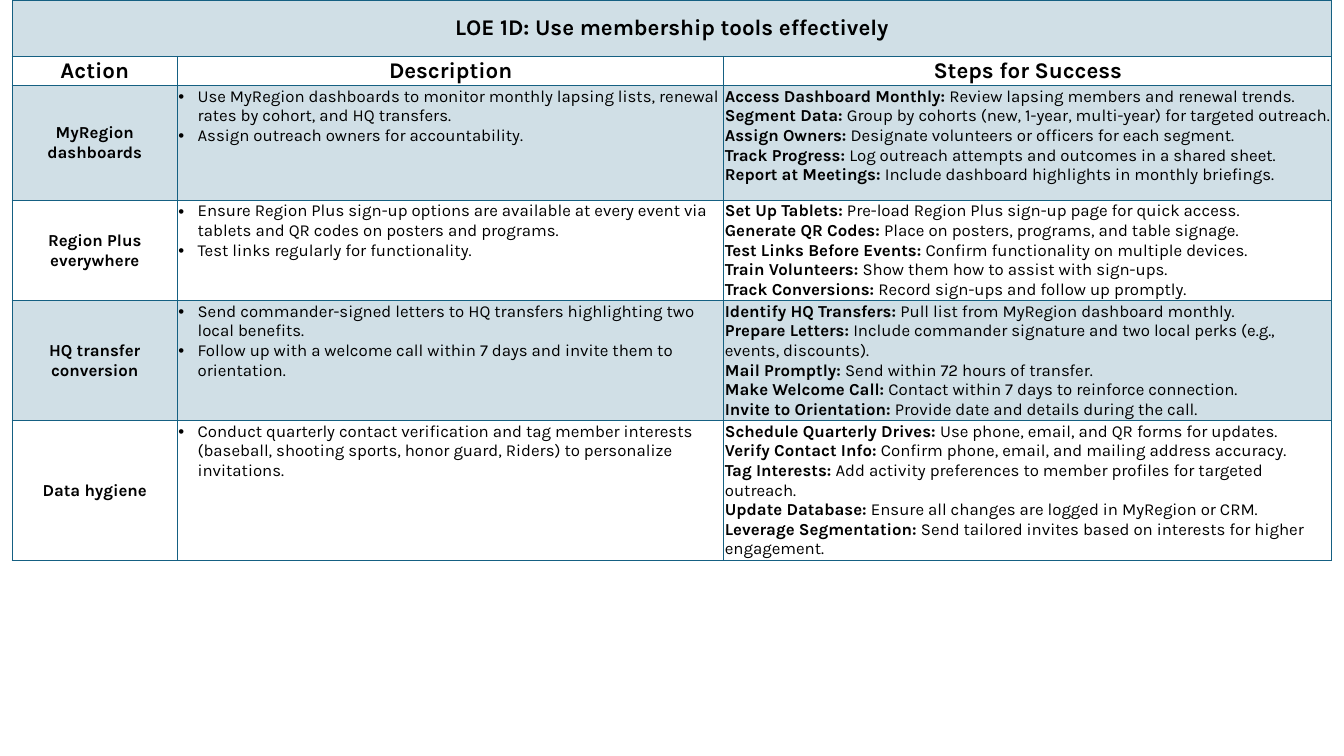
from pptx import Presentation
from pptx.dml.color import RGBColor
from pptx.enum.text import MSO_ANCHOR, PP_ALIGN
from pptx.oxml.ns import qn
from pptx.util import Inches, Pt
from lxml.etree import SubElement

BLUE = RGBColor(0x15, 0x60, 0x82)
BLACK = RGBColor(0, 0, 0)
FONT = "Karla"
HEADING_SIZE = 16
BODY_SIZE = 12
TINT_ALPHA = "20000"
COLUMN_WIDTHS = [1.64, 5.42, 6.03]
ROW_HEIGHTS = [0.56, 0.29, 1.14, 0.95, 0.95, 1.14]

TITLE = "LOE 1D: Use membership tools effectively"
HEADINGS = ["Action", "Description", "Steps for Success"]
ACTIONS = [
    ("MyRegion dashboards",
     ["Use MyRegion dashboards to monitor monthly lapsing lists, renewal rates by cohort, and HQ transfers.",
      "Assign outreach owners for accountability."],
     [("Access Dashboard Monthly:", "Review lapsing members and renewal trends."),
      ("Segment Data:", "Group by cohorts (new, 1-year, multi-year) for targeted outreach."),
      ("Assign Owners:", "Designate volunteers or officers for each segment."),
      ("Track Progress:", "Log outreach attempts and outcomes in a shared sheet."),
      ("Report at Meetings:", "Include dashboard highlights in monthly briefings.")]),
    ("Region Plus everywhere",
     ["Ensure Region Plus sign-up options are available at every event via tablets and QR codes "
      "on posters and programs.",
      "Test links regularly for functionality."],
     [("Set Up Tablets:", "Pre-load Region Plus sign-up page for quick access."),
      ("Generate QR Codes:", "Place on posters, programs, and table signage."),
      ("Test Links Before Events:", "Confirm functionality on multiple devices."),
      ("Train Volunteers:", "Show them how to assist with sign-ups."),
      ("Track Conversions:", "Record sign-ups and follow up promptly.")]),
    ("HQ transfer conversion",
     ["Send commander-signed letters to HQ transfers highlighting two local benefits.",
      "Follow up with a welcome call within 7 days and invite them to orientation."],
     [("Identify HQ Transfers:", "Pull list from MyRegion dashboard monthly."),
      ("Prepare Letters:", "Include commander signature and two local perks (e.g., events, discounts)."),
      ("Mail Promptly:", "Send within 72 hours of transfer."),
      ("Make Welcome Call:", "Contact within 7 days to reinforce connection."),
      ("Invite to Orientation:", "Provide date and details during the call.")]),
    ("Data hygiene",
     ["Conduct quarterly contact verification and tag member interests (baseball, shooting sports, "
      "honor guard, Riders) to personalize invitations."],
     [("Schedule Quarterly Drives:", "Use phone, email, and QR forms for updates."),
      ("Verify Contact Info:", "Confirm phone, email, and mailing address accuracy."),
      ("Tag Interests:", "Add activity preferences to member profiles for targeted outreach."),
      ("Update Database:", "Ensure all changes are logged in MyRegion or CRM."),
      ("Leverage Segmentation:", "Send tailored invites based on interests for higher engagement.")]),
]


def add_run(paragraph, text, size=BODY_SIZE, bold=False):
    """Add one run of black text."""
    run = paragraph.add_run()
    run.text = text
    run.font.name = FONT
    run.font.size = Pt(size)
    run.font.bold = bold
    run.font.color.rgb = BLACK


def cell_paragraphs(cell, items):
    """Pair each item with its own paragraph in the cell."""
    frame = cell.text_frame
    for index, item in enumerate(items):
        yield (frame.add_paragraph() if index else frame.paragraphs[0]), item


def style_cell(cell, tinted):
    """Set the margins, borders and fill of a cell."""
    cell.margin_left = cell.margin_right = Inches(0.01)
    cell.margin_top = cell.margin_bottom = Inches(0.01)
    properties = cell._tc.get_or_add_tcPr()
    for side in ("lnL", "lnR", "lnT", "lnB"):
        line = SubElement(properties, qn(f"a:{side}"), w=str(Pt(1)))
        line_fill = SubElement(line, qn("a:solidFill"))
        SubElement(line_fill, qn("a:srgbClr"), val=str(BLUE))
    if tinted:
        cell.fill.solid()
        cell.fill.fore_color.rgb = BLUE
        color = properties.find(qn("a:solidFill")).find(qn("a:srgbClr"))
        SubElement(color, qn("a:alpha"), val=TINT_ALPHA)
    else:
        cell.fill.background()


def fill_label(cell, text, size):
    """Write a bold label centred in the cell."""
    cell.vertical_anchor = MSO_ANCHOR.MIDDLE
    paragraph = cell.text_frame.paragraphs[0]
    paragraph.alignment = PP_ALIGN.CENTER
    add_run(paragraph, text, size, True)


def fill_description(cell, sentences):
    """Write the description as a bulleted list."""
    for paragraph, sentence in cell_paragraphs(cell, sentences):
        properties = paragraph._p.get_or_add_pPr()
        properties.set("marL", str(Inches(0.19)))
        properties.set("indent", str(Inches(-0.19)))
        SubElement(properties, qn("a:buFont"), typeface="Arial")
        SubElement(properties, qn("a:buChar"), char="•")
        add_run(paragraph, sentence)


def fill_steps(cell, steps):
    """Write the steps, each led by its name in bold."""
    for paragraph, (name, detail) in cell_paragraphs(cell, steps):
        add_run(paragraph, name, bold=True)
        add_run(paragraph, f" {detail}")


def add_action_table(slide, left, top, width, height):
    """Build the table of actions in the given box."""
    table = slide.shapes.add_table(len(ROW_HEIGHTS), len(COLUMN_WIDTHS), Inches(left), Inches(top),
                                   Inches(width), Inches(height)).table
    table.first_row = table.horz_banding = False
    for column, column_width in zip(table.columns, COLUMN_WIDTHS):
        column.width = Inches(column_width)
    for index, (row, row_height) in enumerate(zip(table.rows, ROW_HEIGHTS)):
        row.height = Inches(row_height)
        for cell in row.cells:
            style_cell(cell, tinted=index % 2 == 0)
    table.cell(0, 0).merge(table.cell(0, len(COLUMN_WIDTHS) - 1))
    fill_label(table.cell(0, 0), TITLE, HEADING_SIZE)
    for column, heading in enumerate(HEADINGS):
        fill_label(table.cell(1, column), heading, HEADING_SIZE)
    for row, (action, sentences, steps) in enumerate(ACTIONS, start=2):
        fill_label(table.cell(row, 0), action, BODY_SIZE)
        fill_description(table.cell(row, 1), sentences)
        fill_steps(table.cell(row, 2), steps)


def main():
    """Build and save the presentation."""
    presentation = Presentation()
    presentation.slide_width = Inches(13.33)
    presentation.slide_height = Inches(7.5)
    slide = presentation.slides.add_slide(presentation.slide_layouts[6])
    add_action_table(slide, 0.12, 0, sum(COLUMN_WIDTHS), sum(ROW_HEIGHTS))
    presentation.save("out.pptx")


if __name__ == "__main__":
    main()
